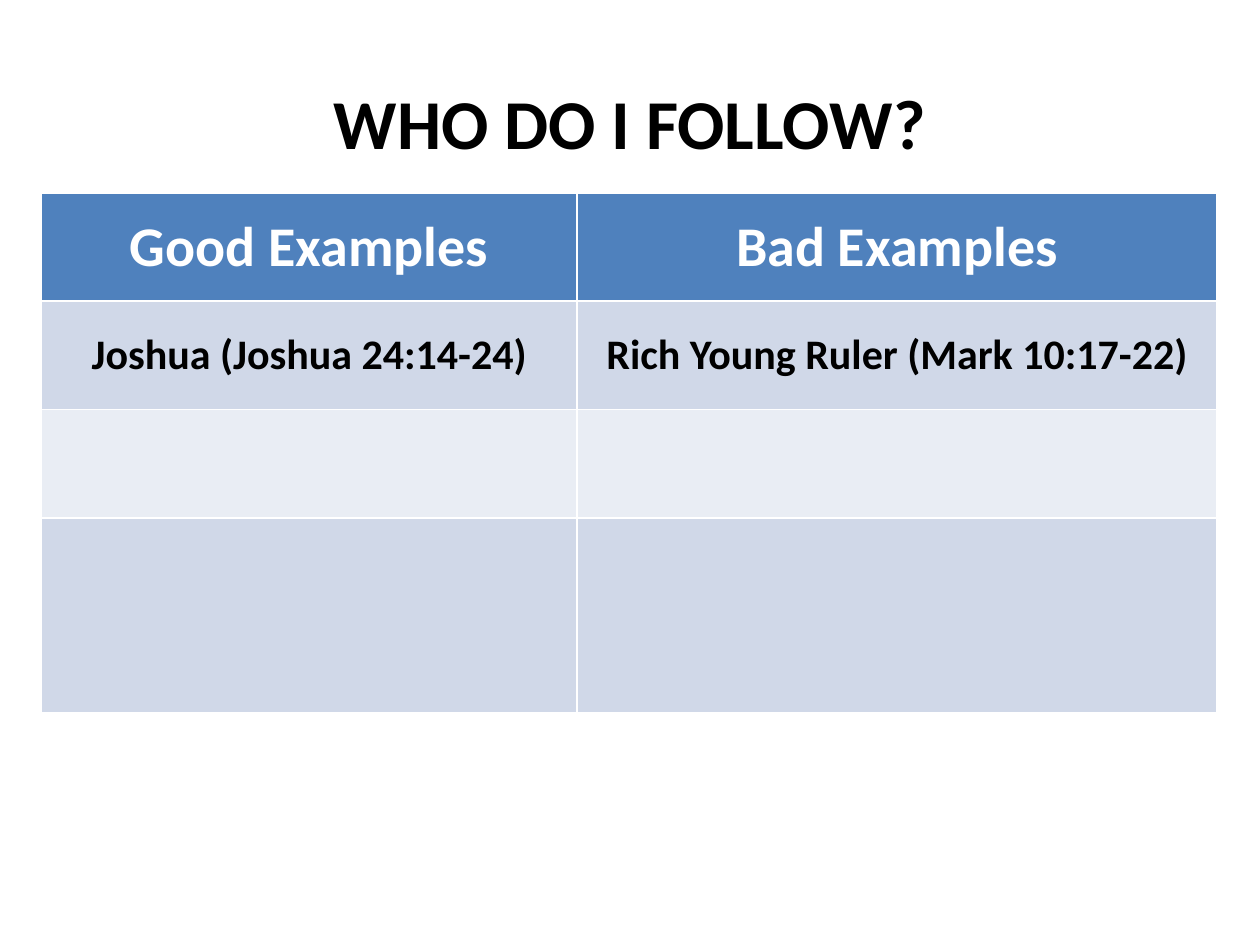
from pptx import Presentation
from pptx.dml.color import RGBColor
from pptx.enum.text import MSO_ANCHOR, PP_ALIGN
from pptx.util import Inches, Pt

CENTER = PP_ALIGN.CENTER
MIDDLE = MSO_ANCHOR.MIDDLE
BLACK = RGBColor(0x00, 0x00, 0x00)
WHITE = RGBColor(0xFF, 0xFF, 0xFF)
HEADER_BLUE = RGBColor(0x4F, 0x81, 0xBD)
DARK_BAND = RGBColor(0xD0, 0xD8, 0xE8)
LIGHT_BAND = RGBColor(0xE9, 0xED, 0xF4)

COLUMN_WIDTHS = [4.25, 5.08]
# Height, fill, text size, text colour and texts of each row
ROWS = [
    (0.86, HEADER_BLUE, 32, WHITE, ["Good Examples", "Bad Examples"]),
    (0.86, DARK_BAND, 24, BLACK,
     ["Joshua (Joshua 24:14-24)", "Rich Young Ruler (Mark 10:17-22)"]),
    (0.86, LIGHT_BAND, 24, BLACK, ["", ""]),
    (1.55, DARK_BAND, 24, BLACK, ["", ""]),
]


def write_centered(para, text, size, color):
    para.text = text
    para.alignment = CENTER
    para.font.name = "Calibri"
    para.font.size = Pt(size)
    para.font.bold = True
    para.font.color.rgb = color


deck = Presentation()
deck.slide_width = Inches(10)
deck.slide_height = Inches(7.5)
page = deck.slides.add_slide(deck.slide_layouts[6])

# Table of examples; its default style draws the white borders
table = page.shapes.add_table(
    len(ROWS), len(COLUMN_WIDTHS), Inches(0.33), Inches(1.53),
    Inches(sum(COLUMN_WIDTHS)), Inches(sum(row[0] for row in ROWS))).table
for column, width in zip(table.columns, COLUMN_WIDTHS):
    column.width = Inches(width)
for row, (height, fill, size, color, texts) in zip(table.rows, ROWS):
    row.height = Inches(height)
    for cell, text in zip(row.cells, texts):
        cell.fill.solid()
        cell.fill.fore_color.rgb = fill
        cell.vertical_anchor = MIDDLE
        if text:
            write_centered(cell.text_frame.paragraphs[0], text, size, color)

# Title
title = page.shapes.add_textbox(Inches(0), Inches(0.58), Inches(10), Inches(0.77))
title.text_frame.word_wrap = True
write_centered(title.text_frame.paragraphs[0], "WHO DO I FOLLOW?", 40, BLACK)

deck.save("out.pptx")
